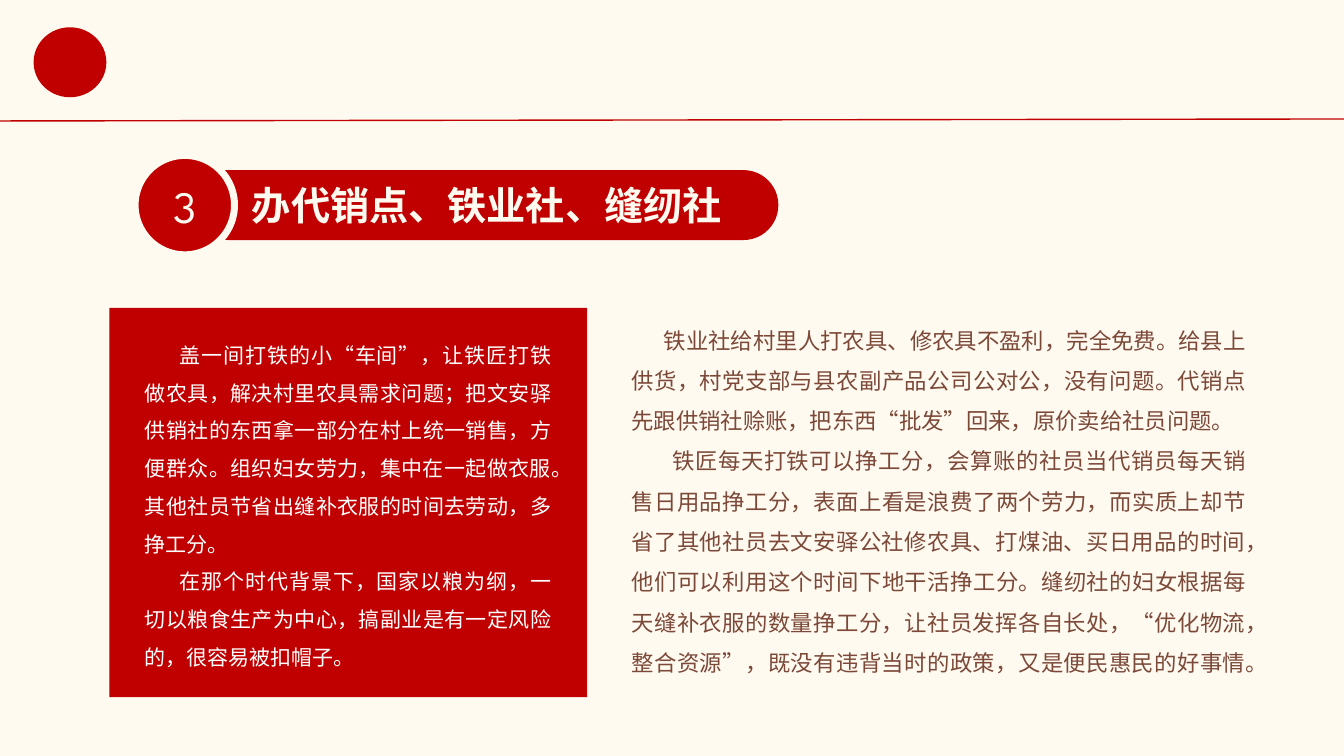
from dataclasses import dataclass

from lxml.etree import SubElement
from pptx import Presentation
from pptx.dml.color import RGBColor
from pptx.enum.shapes import MSO_CONNECTOR, MSO_SHAPE
from pptx.enum.text import MSO_ANCHOR, MSO_AUTO_SIZE, PP_ALIGN
from pptx.oxml.ns import qn
from pptx.util import Pt


@dataclass(frozen=True)
class Theme:
    red: RGBColor = RGBColor(0xC0, 0x00, 0x00)
    cream: RGBColor = RGBColor(0xFF, 0xFA, 0xF0)
    white: RGBColor = RGBColor(0xFF, 0xFF, 0xFF)
    brown: RGBColor = RGBColor(0x7C, 0x49, 0x39)
    number_font: str = "League Spartan"
    text_font: str = "Noto Sans CJK SC"
    number_size: int = 32
    heading_size: int = 28
    panel_size: int = 15
    story_size: int = 16


theme = Theme()


def write(paragraph, text, *, size, color, font=theme.text_font, bold=False,
          align=PP_ALIGN.LEFT, spacing=None, indent=0):
    paragraph.alignment = align
    if spacing:
        paragraph.line_spacing = spacing
    if indent:
        paragraph._p.get_or_add_pPr().set("indent", str(Pt(indent)))
    run = paragraph.add_run()
    run.text = text
    run.font.size = Pt(size)
    run.font.bold = bold
    run.font.color.rgb = color
    run.font.name = font
    SubElement(run._r.get_or_add_rPr(), qn("a:ea")).set("typeface", font)


def add_block(kind, left, top, width, height):
    block = slide.shapes.add_shape(kind, Pt(left), Pt(top), Pt(width), Pt(height))
    block.shadow.inherit = False
    block.fill.solid()
    block.fill.fore_color.rgb = theme.red
    block.line.fill.background()
    return block


presentation = Presentation()
presentation.slide_width = Pt(960)
presentation.slide_height = Pt(540)
slide = presentation.slides.add_slide(presentation.slide_layouts[5])
slide.background.fill.solid()
slide.background.fill.fore_color.rgb = theme.cream

add_block(MSO_SHAPE.OVAL, 24, 19.5, 52, 50)

header_rule = slide.shapes.add_connector(
    MSO_CONNECTOR.STRAIGHT, Pt(0), Pt(86.4), Pt(960), Pt(85))
header_rule.line.color.rgb = theme.red
header_rule.line.width = Pt(1)
SubElement(header_rule._element.spPr, qn("a:effectLst"))

add_block(MSO_SHAPE.RECTANGLE, 78.2, 220, 341.2, 278)
heading_bar = add_block(MSO_SHAPE.ROUNDED_RECTANGLE, 138.2, 121.5, 417.8, 50)
heading_bar.adjustments[0] = 0.5

number_badge = add_block(MSO_SHAPE.OVAL, 96.5, 111, 71, 71)
number_badge.line.color.rgb = theme.cream
number_badge.line.width = Pt(5)
number_badge.text_frame.vertical_anchor = MSO_ANCHOR.MIDDLE
write(number_badge.text_frame.paragraphs[0], "3", size=theme.number_size,
      color=theme.cream, font=theme.number_font, align=PP_ALIGN.CENTER)

heading = slide.shapes.title
heading.left, heading.top, heading.width, heading.height = (
    Pt(172.8), Pt(126), Pt(350.6), Pt(41))
heading.text_frame.word_wrap = False
heading.text_frame.auto_size = MSO_AUTO_SIZE.NONE
heading.text_frame.vertical_anchor = MSO_ANCHOR.TOP
write(heading.text_frame.paragraphs[0], "办代销点、铁业社、缝纫社",
      size=theme.heading_size, color=theme.cream, bold=True)
heading.element.getparent().append(heading.element)

stories = [
    ((96.5, 232, 304.6, 254), theme.panel_size, theme.white, [
        (25, "盖一间打铁的小“车间”，让铁匠打铁做农具，解决村里农具需求问题；把文安驿供销社的东西拿一部分在村上统一销售，方便群众。组织妇女劳力，集中在一起做衣服。其他社员节省出缝补衣服的时间去劳动，多挣工分。"),
        (25, "在那个时代背景下，国家以粮为纲，一切以粮食生产为中心，搞副业是有一定风险的，很容易被扣帽子。"),
    ]),
    ((444, 220.3, 453.6, 268.6), theme.story_size, theme.brown, [
        (23, "铁业社给村里人打农具、修农具不盈利，完全免费。给县上供货，村党支部与县农副产品公司公对公，没有问题。代销点先跟供销社赊账，把东西“批发”回来，原价卖给社员问题。"),
        (29, "铁匠每天打铁可以挣工分，会算账的社员当代销员每天销售日用品挣工分，表面上看是浪费了两个劳力，而实质上却节省了其他社员去文安驿公社修农具、打煤油、买日用品的时间，他们可以利用这个时间下地干活挣工分。缝纫社的妇女根据每天缝补衣服的数量挣工分，让社员发挥各自长处，“优化物流，整合资源”，既没有违背当时的政策，又是便民惠民的好事情。"),
    ]),
]
for bounds, size, color, passages in stories:
    story = slide.shapes.add_textbox(*map(Pt, bounds)).text_frame
    story.word_wrap = True
    for position, (indent, passage) in enumerate(passages):
        paragraph = story.add_paragraph() if position else story.paragraphs[0]
        write(paragraph, passage, size=size, color=color,
              align=PP_ALIGN.JUSTIFY, spacing=1.5, indent=indent)

presentation.save("out.pptx")
